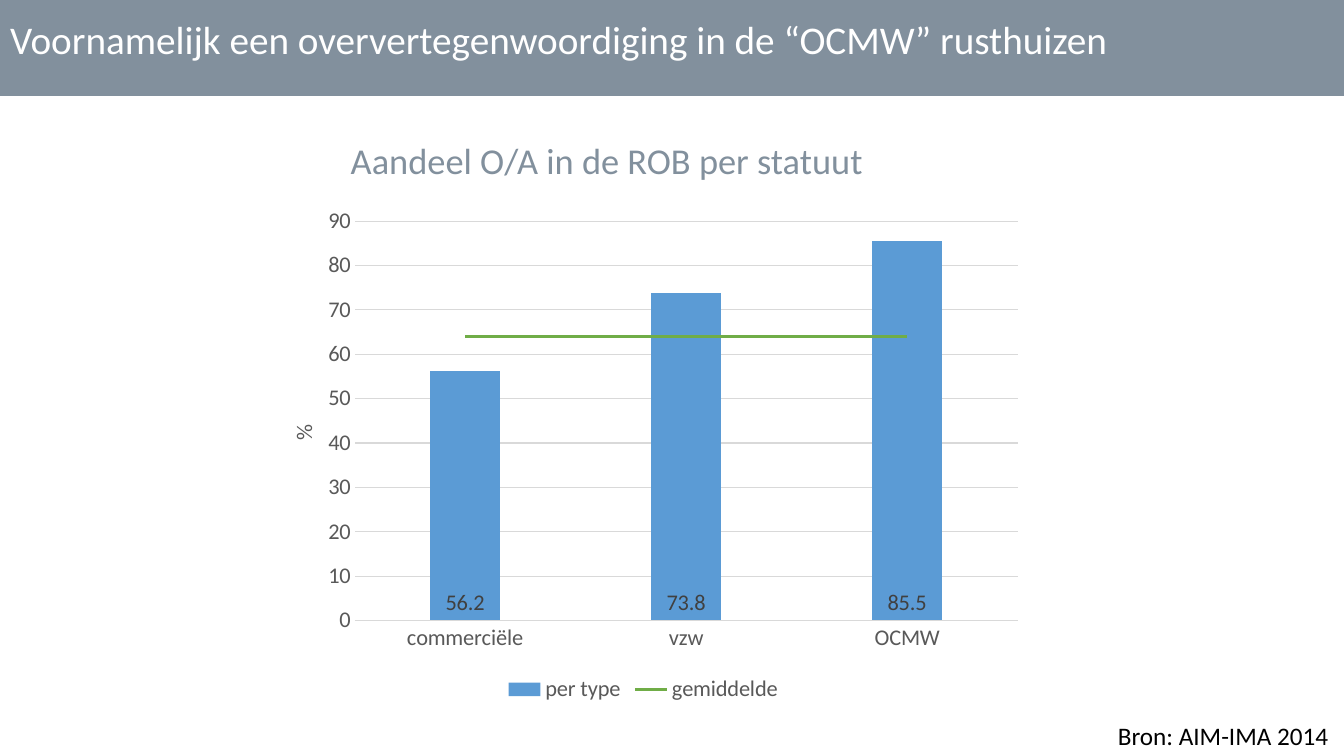
"""Build a slide comparing the O/A share in ROB care homes by legal status."""
import pptx
import pptx.chart.data
import pptx.dml.color
import pptx.enum.chart
import pptx.enum.shapes
import pptx.enum.text
import pptx.oxml
import pptx.oxml.ns
import pptx.util
from pptx.util import Cm

COLORS = {
    "slate": "82909D", "white": "FFFFFF", "black": "000000", "axis": "595959",
    "label": "404040", "grid": "D9D9D9", "bar": "5B9BD5", "mean": "70AD47",
}


def rgb(name):
    return pptx.dml.color.RGBColor.from_string(COLORS[name])


def style_font(font, size, color):
    font.size = pptx.util.Pt(size)
    font.name = "Calibri"
    font.bold = False
    font.color.rgb = rgb(color)


deck = pptx.Presentation()
deck.slide_width, deck.slide_height = Cm(33.87), Cm(19.05)
slide = deck.slides.add_slide(deck.slide_layouts[5])
heading = slide.shapes.title

banner = slide.shapes.add_shape(
    pptx.enum.shapes.MSO_SHAPE.RECTANGLE, 0, 0, deck.slide_width, Cm(2.42))
banner.shadow.inherit = False
banner.fill.solid()
banner.fill.fore_color.rgb = rgb("slate")
banner.line.fill.background()
heading._element.addprevious(banner._element)

source = slide.shapes.add_textbox(0, 0, Cm(1), Cm(1))
subtitle = slide.shapes.add_textbox(0, 0, Cm(1), Cm(1))
ALIGN = pptx.enum.text.PP_ALIGN
texts = [
    (heading, "Voornamelijk een oververtegenwoordiging in de “OCMW” rusthuizen",
     (0, 0.25, 33.87, 1.45), 28, "white", ALIGN.LEFT),
    (source, "Bron: AIM-IMA 2014 ", (15.56, 18.03, 18.31, 1.02), 18, "black", ALIGN.RIGHT),
    (subtitle, "Aandeel O/A in de ROB per statuut",
     (8.59, 3.35, 17.45, 1.37), 26, "slate", ALIGN.LEFT),
]
for box, wording, place, size, color, alignment in texts:
    box.left, box.top, box.width, box.height = map(Cm, place)
    frame = box.text_frame
    frame.text = wording
    frame.word_wrap = True
    frame.auto_size = pptx.enum.text.MSO_AUTO_SIZE.SHAPE_TO_FIT_TEXT
    frame.vertical_anchor = pptx.enum.text.MSO_ANCHOR.TOP
    frame.paragraphs[0].alignment = alignment
    style_font(frame.paragraphs[0].runs[0].font, size, color)

shares = pptx.chart.data.CategoryChartData()
shares.categories = ["commerciële", "vzw", "OCMW"]
shares.add_series("per type", (56.2, 73.8, 85.5))
shares.add_series("gemiddelde", (64, 64, 64))
chart = slide.shapes.add_chart(
    pptx.enum.chart.XL_CHART_TYPE.COLUMN_CLUSTERED,
    Cm(6.38), Cm(4.93), Cm(19.66), Cm(12.9), shares).chart
style_font(chart.font, 16, "axis")
chart.has_title = False
chart.has_legend = True
chart.legend.position = pptx.enum.chart.XL_LEGEND_POSITION.BOTTOM
chart.legend.include_in_layout = False
style_font(chart.legend.font, 16, "axis")

columns = chart.plots[0]
columns.gap_width, columns.overlap = 219, -27
columns.vary_by_categories = False
per_type = columns.series[0]
per_type.format.fill.solid()
per_type.format.fill.fore_color.rgb = rgb("bar")
labels = per_type.data_labels
labels.show_value = True
labels.position = pptx.enum.chart.XL_LABEL_POSITION.INSIDE_BASE
style_font(labels.font, 16, "label")

bar_xml = columns._element
line_xml = pptx.oxml.parse_xml(
    f'<c:lineChart {pptx.oxml.ns.nsdecls("c")}><c:grouping val="standard"/>'
    '<c:varyColors val="0"/><c:marker val="1"/></c:lineChart>')
mean_xml = columns.series[1]._element
for bar_setting in mean_xml.findall(pptx.oxml.ns.qn("c:invertIfNegative")):
    mean_xml.remove(bar_setting)
line_xml.insert(2, mean_xml)
for axis_id in bar_xml.findall(pptx.oxml.ns.qn("c:axId")):
    line_xml.append(pptx.oxml.parse_xml(
        f'<c:axId {pptx.oxml.ns.nsdecls("c")} val="{axis_id.get("val")}"/>'))
bar_xml.addnext(line_xml)
mean = chart.plots[1].series[0]
mean.smooth = False
mean.marker.style = pptx.enum.chart.XL_MARKER_STYLE.NONE
mean.format.line.color.rgb = rgb("mean")
mean.format.line.width = pptx.util.Pt(2.25)

status_axis, percent_axis = chart.category_axis, chart.value_axis
for axis in (status_axis, percent_axis):
    axis.major_tick_mark = axis.minor_tick_mark = pptx.enum.chart.XL_TICK_MARK.NONE
    style_font(axis.tick_labels.font, 16, "axis")
percent_axis.minimum_scale, percent_axis.maximum_scale = 0, 90
percent_axis.major_unit = 10
percent_axis.format.line.fill.background()
for line in (status_axis.format.line, percent_axis.major_gridlines.format.line):
    line.color.rgb = rgb("grid")
    line.width = pptx.util.Pt(0.75)
percent_title = percent_axis.axis_title
percent_title.text_frame.text = "%"
style_font(percent_title.text_frame.paragraphs[0].runs[0].font, 16, "axis")

plot_area = bar_xml.getparent()
layouts = [
    (percent_title._element, 1, {"xMode": "edge", "yMode": "edge", "x": 0.04, "y": 0.44}),
    (plot_area, 0, {"layoutTarget": "inner", "xMode": "edge", "yMode": "edge",
                    "x": 0.13, "y": 0.05, "w": 0.85, "h": 0.78}),
]
for parent, index, settings in layouts:
    for old in parent.findall(pptx.oxml.ns.qn("c:layout")):
        parent.remove(old)
    entries = "".join(f'<c:{key} val="{value}"/>' for key, value in settings.items())
    parent.insert(index, pptx.oxml.parse_xml(
        f'<c:layout {pptx.oxml.ns.nsdecls("c")}><c:manualLayout>{entries}'
        '</c:manualLayout></c:layout>'))

deck.save("out.pptx")
